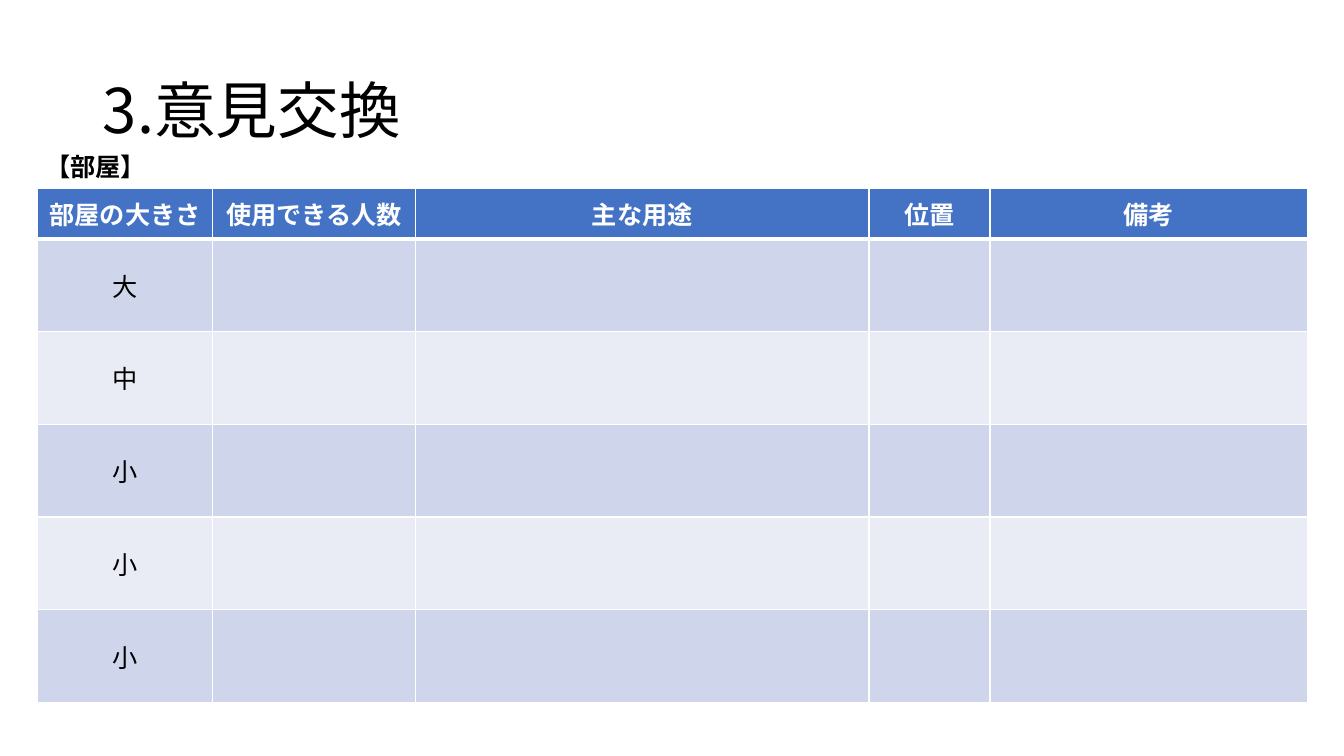
import pptx
import pptx.util
import pptx.dml.color
import pptx.enum.lang
import pptx.enum.text
import lxml.etree
from dataclasses import dataclass
from pptx.util import Inches
from pptx.enum.text import PP_ALIGN, MSO_ANCHOR, MSO_AUTO_SIZE
from pptx.oxml.ns import qn

TITLE = "3.意見交換"
CAPTION = "【部屋】"
COLUMNS = [("部屋の大きさ", 1.74), ("使用できる人数", 2.01), ("主な用途", 4.5),
           ("位置", 1.2), ("備考", 3.15)]
ROOM_SIZES = ["大", "中", "小", "小", "小"]
HEADER_HEIGHT, ROOM_HEIGHT = 0.5, 0.92


@dataclass(frozen=True)
class Theme:
    font: str = "Noto Sans CJK JP"
    title_size: int = 44
    body_size: int = 18
    text: str = "000000"
    white: str = "FFFFFF"
    header: str = "4472C4"
    bands: tuple = ("CFD5EA", "E9EBF5")
    thin: int = 1
    thick: int = 3


THEME = Theme()


def rgb(color):
    return pptx.dml.color.RGBColor.from_string(color)


def write(tf, text, size=THEME.body_size, color=THEME.text, bold=False,
          align=PP_ALIGN.LEFT, spacing=1.0):
    p = tf.paragraphs[0]
    p.alignment, p.line_spacing = align, spacing
    r = p.add_run()
    r.text = text
    r.font.size, r.font.bold = pptx.util.Pt(size), bold
    r.font.color.rgb = rgb(color)
    r.font.name = THEME.font
    r.font.language_id = pptx.enum.lang.MSO_LANGUAGE_ID.JAPANESE
    east_asian = lxml.etree.SubElement(r.font._element, qn("a:ea"))
    east_asian.set("typeface", THEME.font)


def set_borders(cell, top, bottom):
    """Draw white cell borders; top and bottom are widths in points."""
    widths = {"L": THEME.thin, "R": THEME.thin, "T": top, "B": bottom}
    tc_pr = cell._tc.get_or_add_tcPr()
    for side, width in widths.items():
        ln = lxml.etree.SubElement(tc_pr, qn(f"a:ln{side}"), w=str(pptx.util.Pt(width)))
        fill = lxml.etree.SubElement(ln, qn("a:solidFill"))
        lxml.etree.SubElement(fill, qn("a:srgbClr"), val=THEME.white)


def add_title(s):
    sp = s.shapes.title
    sp.left, sp.top, sp.width, sp.height = map(Inches, (0.92, 0.4, 11.5, 1.45))
    tf = sp.text_frame
    tf.word_wrap, tf.auto_size = True, MSO_AUTO_SIZE.NONE
    tf.vertical_anchor = MSO_ANCHOR.MIDDLE
    write(tf, TITLE, size=THEME.title_size, spacing=0.9)


def add_room_table(s):
    rows = [[name for name, _ in COLUMNS]]
    rows += [[size] + [""] * (len(COLUMNS) - 1) for size in ROOM_SIZES]
    heights = [HEADER_HEIGHT] + [ROOM_HEIGHT] * len(ROOM_SIZES)
    width = sum(w for _, w in COLUMNS)
    table = s.shapes.add_table(len(rows), len(COLUMNS), Inches(0.37), Inches(1.87),
                               Inches(width), Inches(sum(heights))).table
    for column, (_, w) in zip(table.columns, COLUMNS):
        column.width = Inches(w)
    for i, (row, height) in enumerate(zip(rows, heights)):
        table.rows[i].height = Inches(height)
        header = i == 0
        for j, text in enumerate(row):
            cell = table.cell(i, j)
            set_borders(cell, top=THEME.thick if i == 1 else THEME.thin,
                        bottom=THEME.thick if header else THEME.thin)
            cell.fill.solid()
            cell.fill.fore_color.rgb = rgb(THEME.header if header else THEME.bands[(i - 1) % 2])
            cell.vertical_anchor = MSO_ANCHOR.MIDDLE
            if text:
                write(cell.text_frame, text, bold=header, align=PP_ALIGN.CENTER,
                      color=THEME.white if header else THEME.text)


def add_caption(s):
    tf = s.shapes.add_textbox(*map(Inches, (0.35, 1.45, 6.67, 0.4))).text_frame
    tf.word_wrap, tf.auto_size = True, MSO_AUTO_SIZE.SHAPE_TO_FIT_TEXT
    write(tf, CAPTION, bold=True)


def main():
    prs = pptx.Presentation()
    prs.slide_width, prs.slide_height = Inches(13.33), Inches(7.5)
    s = prs.slides.add_slide(prs.slide_layouts[5])
    add_title(s)
    add_room_table(s)
    add_caption(s)
    prs.save("out.pptx")


if __name__ == "__main__":
    main()
